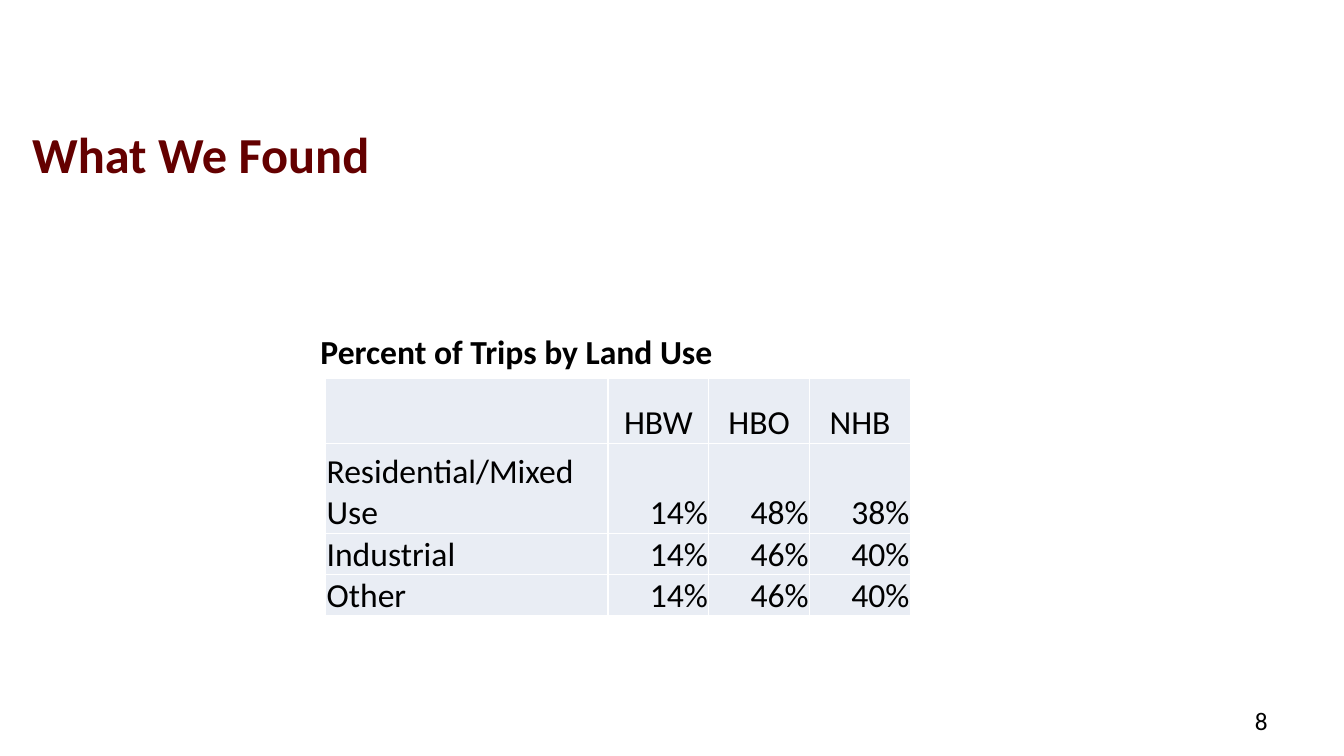
from lxml.etree import SubElement
from pptx import Presentation
from pptx.dml.color import RGBColor
from pptx.enum.text import MSO_ANCHOR, PP_ALIGN
from pptx.oxml.ns import qn
from pptx.util import Inches, Pt

# Content
TITLE = "What We Found"
CAPTION = "Percent of Trips by Land Use"
PAGE_NUMBER = "8"
TRIP_SHARES = [
    ("", "HBW", "HBO", "NHB"),
    ("Residential/Mixed Use", "14%", "48%", "38%"),
    ("Industrial", "14%", "46%", "40%"),
    ("Other", "14%", "46%", "40%"),
]
COLUMN_WIDTHS = (2.8, 1, 1, 1)
ROW_HEIGHTS = (0.65, 0.89, 0.41, 0.41)

THEME = {
    "font": "Calibri",
    "title": "640000",
    "text": "000000",
    "cell": "E9EDF4",
    "border": "FFFFFF",
    "title_size": 36,
    "body_size": 24,
    "number_size": 18,
}


def style(paragraph, size, color="text", bold=False, align=PP_ALIGN.LEFT):
    paragraph.alignment = align
    font = paragraph.font
    font.name = THEME["font"]
    font.size = Pt(THEME[size])
    font.bold = bold
    font.color.rgb = RGBColor.from_string(THEME[color])


def add_label(slide, text, box, size, **look):
    frame = slide.shapes.add_textbox(*map(Inches, box)).text_frame
    frame.word_wrap = True
    frame.vertical_anchor = MSO_ANCHOR.MIDDLE
    frame.text = text
    style(frame.paragraphs[0], size, **look)


def add_borders(cell):
    properties = cell._tc.get_or_add_tcPr()
    for side in ("lnL", "lnR", "lnT", "lnB"):
        line = SubElement(properties, qn(f"a:{side}"), w=str(Pt(1)))
        fill = SubElement(line, qn("a:solidFill"))
        SubElement(fill, qn("a:srgbClr"), val=THEME["border"])


def cell_alignment(row, column):
    if column == 0:
        return PP_ALIGN.LEFT
    return PP_ALIGN.CENTER if row == 0 else PP_ALIGN.RIGHT


def add_trip_table(slide, left, top):
    table = slide.shapes.add_table(
        len(ROW_HEIGHTS), len(COLUMN_WIDTHS), Inches(left), Inches(top),
        Inches(sum(COLUMN_WIDTHS)), Inches(sum(ROW_HEIGHTS))).table
    table.first_row = table.horz_banding = False
    for column, width in zip(table.columns, COLUMN_WIDTHS):
        column.width = Inches(width)
    for row, height in zip(table.rows, ROW_HEIGHTS):
        row.height = Inches(height)
    for r, values in enumerate(TRIP_SHARES):
        for c, value in enumerate(values):
            cell = table.cell(r, c)
            add_borders(cell)
            cell.fill.solid()
            cell.fill.fore_color.rgb = RGBColor.from_string(THEME["cell"])
            cell.margin_left = cell.margin_right = cell.margin_top = Inches(0.01)
            cell.margin_bottom = 0
            cell.vertical_anchor = MSO_ANCHOR.BOTTOM
            cell.text = value
            style(cell.text_frame.paragraphs[0], "body_size",
                  align=cell_alignment(r, c))


def main():
    deck = Presentation()
    deck.slide_width, deck.slide_height = Inches(13.33), Inches(7.5)
    slide = deck.slides.add_slide(deck.slide_layouts[6])

    # Title and page number
    add_label(slide, TITLE, (0.22, 1.17, 8.82, 0.71), "title_size",
              color="title", bold=True)
    add_label(slide, PAGE_NUMBER, (9.56, 6.95, 3.11, 0.4), "number_size",
              align=PP_ALIGN.RIGHT)

    # Trip table with its caption
    add_trip_table(slide, 3.23, 3.75)
    add_label(slide, CAPTION, (3.08, 3.23, 5.22, 0.5), "body_size", bold=True)

    deck.save("out.pptx")


if __name__ == "__main__":
    main()
